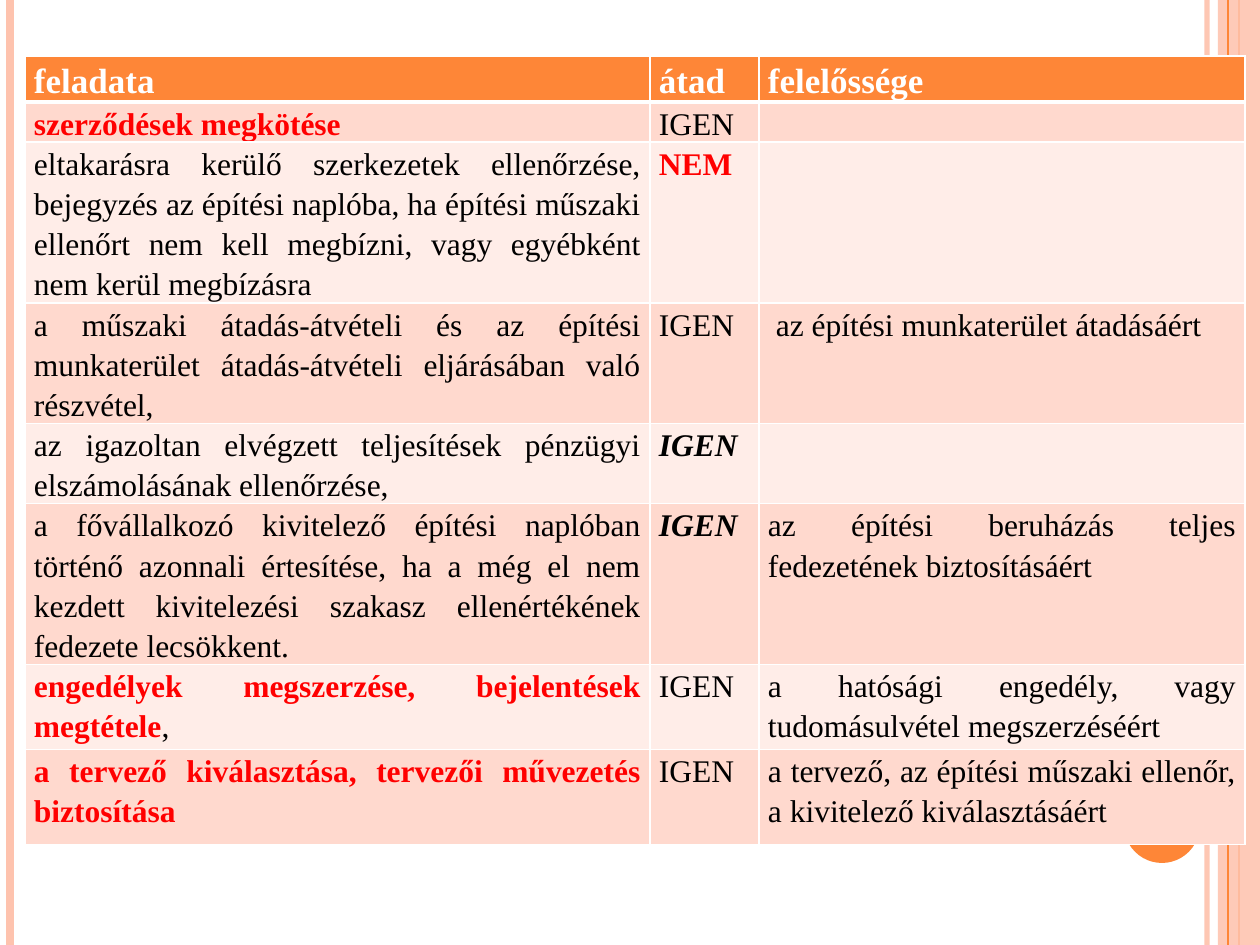
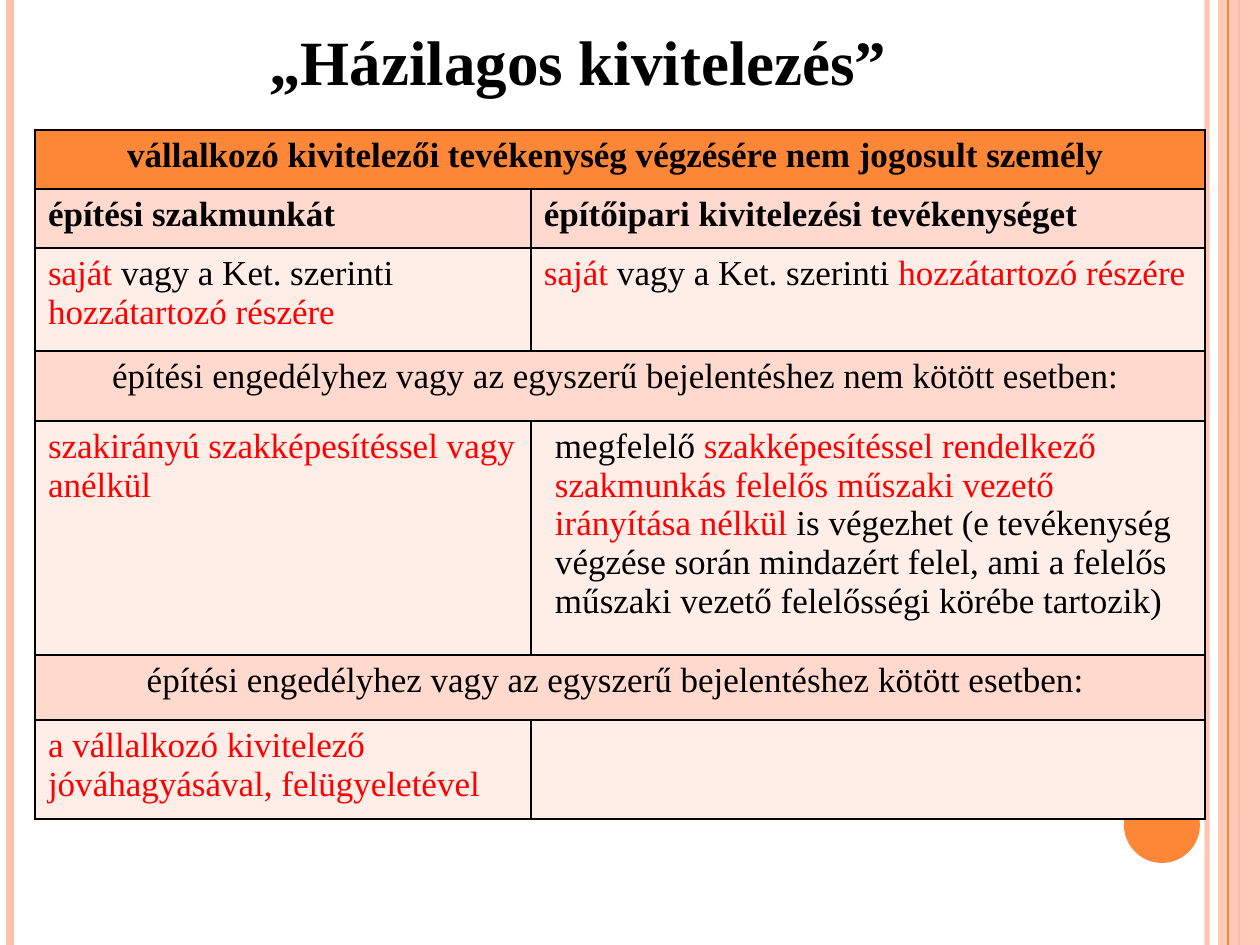
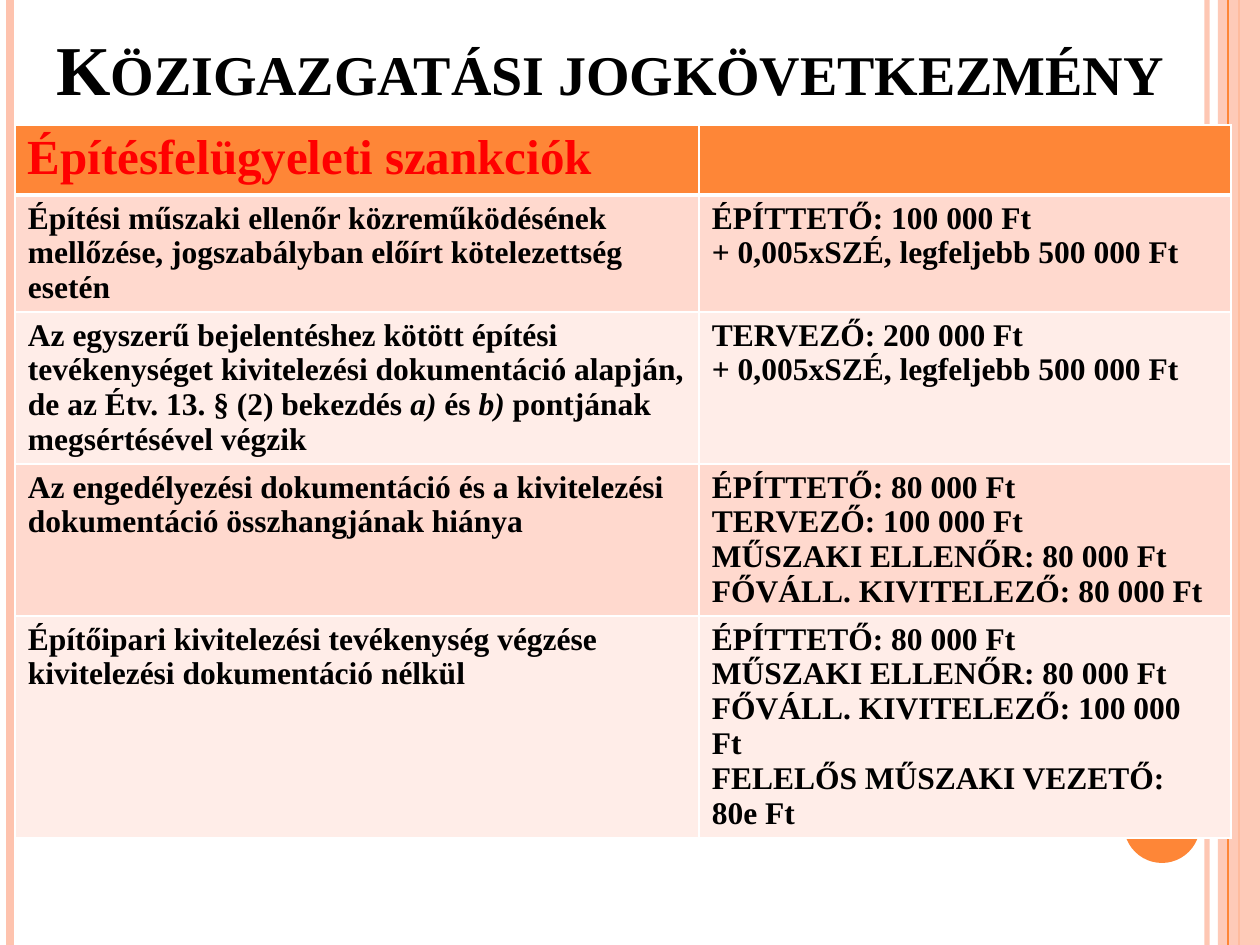
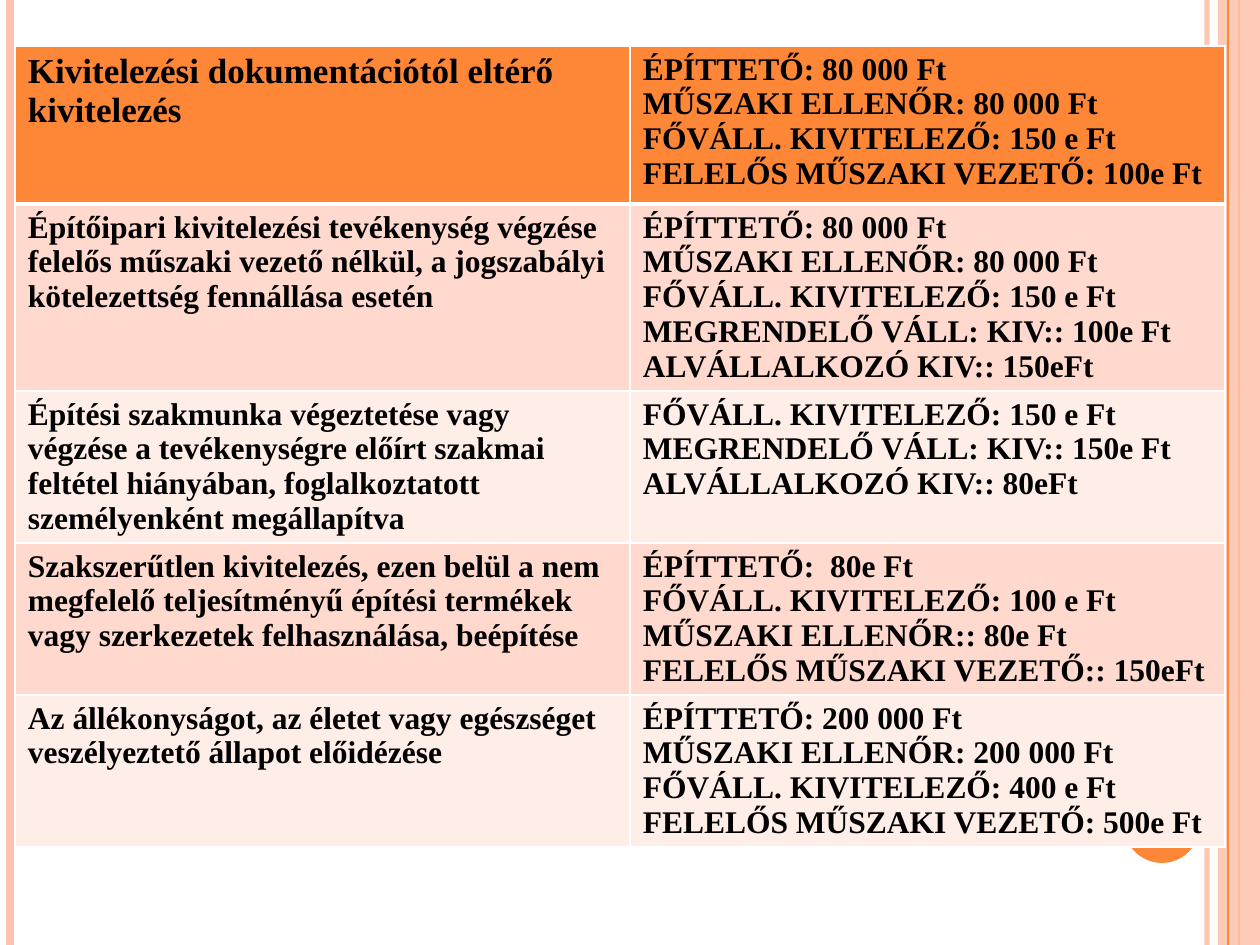
from lxml import etree
from pptx import Presentation
from pptx import util as u
from pptx.dml.color import RGBColor
from pptx.enum import shapes, text
from pptx.oxml import ns

PX = 914400 / 126
SLIDE_W, SLIDE_H = 1260, 945

THEME = {
    "font": "Times New Roman",
    "orange": "FE8637", "peach": "FEC3AE",
    "bands": ("FFEDE8", "FFD9CE"),
    "white": "FFFFFF", "black": "000000", "red": "FF0000",
    "body": 18, "lead": 20, "head": 28, "title": 36, "big_title": 40,
}
SIZES = ("body", "lead", "head", "title", "big_title")
COLOURS = ("white", "black", "red")

# Content: a cell is a string or a list of (text, style words) runs;
# "\n" parts paragraphs, "\v" breaks a line, None continues a merged cell
DUTIES = [
    [[("feladata ", "lead white bold")], [("átad", "lead white bold")],
     [("felelőssége", "lead white bold")]],
    [[("szerződések megkötése", "red bold")], "IGEN", ""],
    ["eltakarásra kerülő szerkezetek ellenőrzése, bejegyzés az építési naplóba, "
     "ha építési műszaki ellenőrt nem kell megbízni, vagy egyébként nem kerül megbízásra",
     [("NEM", "red bold")], ""],
    ["a műszaki átadás-átvételi és az építési munkaterület átadás-átvételi "
     "eljárásában való részvétel,",
     "IGEN", [(" ", "bold italic"), ("az építési munkaterület átadásáért", "")]],
    ["az igazoltan elvégzett teljesítések pénzügyi elszámolásának ellenőrzése,",
     [("IGEN", "bold italic")], ""],
    ["a fővállalkozó kivitelező építési naplóban történő azonnali értesítése, ha a még "
     "el nem kezdett kivitelezési szakasz ellenértékének fedezete lecsökkent.",
     [("IGEN", "bold italic")],
     "az építési beruházás teljes fedezetének biztosításáért"],
    [[("engedélyek megszerzése, bejelentések megtétele", "red bold"), (",", "")],
     "IGEN", "a hatósági engedély, vagy tudomásulvétel megszerzéséért"],
    [[("a tervező kiválasztása, tervezői művezetés biztosítása", "red bold")],
     "IGEN", "a tervező, az építési műszaki ellenőr, a kivitelező kiválasztásáért"],
]

SELF_BUILD = [
    [[("vállalkozó kivitelezői tevékenység végzésére nem jogosult személy ", "bold")], None],
    [[("építési szakmunkát", "bold")],
     [("építőipari kivitelezési tevékenységet", "bold")]],
    [[("saját ", "red"), ("vagy a Ket. szerinti ", ""), ("hozzátartozó részére", "red")],
     [("saját", "red"), (" vagy a Ket. szerinti ", ""), ("hozzátartozó részére", "red")]],
    ["építési engedélyhez vagy az egyszerű bejelentéshez nem kötött esetben: ", None],
    [[("szakirányú szakképesítéssel vagy anélkül", "red")],
     [("megfelelő ", ""),
      ("szakképesítéssel rendelkező szakmunkás felelős műszaki vezető irányítása nélkül", "red"),
      (" is végezhet (e tevékenység végzése során mindazért felel, ami a felelős műszaki "
       "vezető felelősségi körébe tartozik)", "")]],
    ["építési engedélyhez vagy az egyszerű bejelentéshez kötött esetben: ", None],
    [[("a vállalkozó kivitelező jóváhagyásával, felügyeletével", "red")], ""],
]

SANCTIONS = [
    [[("Építésfelügyeleti szankciók", "head red")], ""],
    ["Építési műszaki ellenőr közreműködésének mellőzése, jogszabályban előírt "
     "kötelezettség esetén",
     "ÉPÍTTETŐ: 100 000 Ft\v+ 0,005xSZÉ, legfeljebb 500 000 Ft"],
    [[("Az egyszerű bejelentéshez kötött építési tevékenységet kivitelezési dokumentáció "
       "alapján, de az Étv. 13. § (2) bekezdés ", ""), ("a) ", "italic"), ("és ", ""),
      ("b) ", "italic"), ("pontjának megsértésével végzik", "")],
     "TERVEZŐ: 200 000 Ft\v+ 0,005xSZÉ, legfeljebb 500 000 Ft"],
    ["Az engedélyezési dokumentáció és a kivitelezési dokumentáció összhangjának hiánya",
     "ÉPÍTTETŐ: 80 000 Ft\nTERVEZŐ: 100 000 Ft\nMŰSZAKI ELLENŐR: 80 000 Ft\n"
     "FŐVÁLL. KIVITELEZŐ: 80 000 Ft"],
    ["Építőipari kivitelezési tevékenység végzése kivitelezési dokumentáció nélkül",
     "ÉPÍTTETŐ: 80 000 Ft\nMŰSZAKI ELLENŐR: 80 000 Ft\n"
     "FŐVÁLL. KIVITELEZŐ: 100 000 Ft\nFELELŐS MŰSZAKI VEZETŐ: 80e Ft"],
]

MORE_SANCTIONS = [
    [[("Kivitelezési dokumentációtól eltérő kivitelezés", "lead")],
     "ÉPÍTTETŐ: 80 000 Ft\nMŰSZAKI ELLENŐR: 80 000 Ft\n"
     "FŐVÁLL. KIVITELEZŐ: 150 e Ft\nFELELŐS MŰSZAKI VEZETŐ: 100e Ft"],
    ["Építőipari kivitelezési tevékenység végzése felelős műszaki vezető nélkül, "
     "a jogszabályi kötelezettség fennállása esetén",
     "ÉPÍTTETŐ: 80 000 Ft\nMŰSZAKI ELLENŐR: 80 000 Ft\nFŐVÁLL. KIVITELEZŐ: 150 e Ft\n"
     "MEGRENDELŐ VÁLL: KIV:: 100e Ft\nALVÁLLALKOZÓ KIV:: 150eFt"],
    ["Építési szakmunka végeztetése vagy végzése a tevékenységre előírt szakmai feltétel "
     "hiányában, foglalkoztatott személyenként megállapítva",
     "FŐVÁLL. KIVITELEZŐ: 150 e Ft\nMEGRENDELŐ VÁLL: KIV:: 150e Ft\n"
     "ALVÁLLALKOZÓ KIV:: 80eFt"],
    ["Szakszerűtlen kivitelezés, ezen belül a nem megfelelő teljesítményű építési termékek "
     "vagy szerkezetek felhasználása, beépítése",
     "ÉPÍTTETŐ:  80e Ft\nFŐVÁLL. KIVITELEZŐ: 100 e Ft\nMŰSZAKI ELLENŐR:: 80e Ft\n"
     "FELELŐS MŰSZAKI VEZETŐ:: 150eFt"],
    ["Az állékonyságot, az életet vagy egészséget veszélyeztető állapot előidézése",
     "ÉPÍTTETŐ: 200 000 Ft\nMŰSZAKI ELLENŐR: 200 000 Ft\n"
     "FŐVÁLL. KIVITELEZŐ: 400 e Ft\nFELELŐS MŰSZAKI VEZETŐ: 500e Ft"],
]

JUSTIFIED = {"alignment": text.PP_ALIGN.JUSTIFY, "line_spacing": 1.15}
CENTRED = {"alignment": text.PP_ALIGN.CENTER}

SLIDES = [
    {"cells": DUTIES, "at": (25, 56), "cols": (625, 109, 486),
     "rows": (46, 39, 161, 120, 80, 161, 85, 95),
     "style": "body black", "para": JUSTIFIED, "insets": (9, 0)},
    {"cells": SELF_BUILD, "at": (35, 130), "cols": (496, 674),
     "rows": (59, 59, 103, 70, 234, 65, 99),
     "style": "lead black", "line": "black", "header_rule": 1, "indents": {(4, 1): 11},
     "title": ("„Házilagos kivitelezés”", "title black bold", (257, 16, 649, 90), {})},
    {"cells": SANCTIONS, "at": (15, 125), "cols": (684, 532),
     "rows": (70, 117, 152, 152, 222), "style": "body black bold",
     "title": ("Közigazgatási jogkövetkezmény", "big_title black bold smallcaps",
               (44, 16, 1147, 100), {"vertical_anchor": text.MSO_ANCHOR.BOTTOM})},
    {"cells": MORE_SANCTIONS, "at": (15, 46), "cols": (615, 595),
     "rows": (158, 187, 152, 152, 152), "style": "body black bold"},
]


def px(n):
    return u.Emu(round(n * PX))


def rgb(name):
    return RGBColor.from_string(THEME.get(name, name))


def set_all(target, values):
    for key, value in values.items():
        setattr(target, key, value)


def add_child(parent, tag, **attributes):
    return etree.SubElement(parent, ns.qn(tag), attributes)


def set_alpha(props, percent):
    colour = next(props.iter(ns.qn("a:srgbClr")))
    add_child(colour, "a:alpha", val=str(percent * 1000))


# Text
def style_run(run, style):
    words = style.split()
    values = {"name": THEME["font"], "bold": "bold" in words, "italic": "italic" in words}
    for word in words:
        if word in SIZES:
            values["size"] = u.Pt(THEME[word])
    set_all(run.font, values)
    # Later words override earlier ones
    run.font.color.rgb = rgb([w for w in words if w in COLOURS][-1])
    if "smallcaps" in words:
        run.font._element.set("cap", "small")


def write(frame, content, style, para=None, indent=0):
    runs = [(content, "")] if isinstance(content, str) else content
    paragraph = frame.paragraphs[0]
    for words, extra in runs:
        for i, part in enumerate(words.split("\n")):
            if i:
                paragraph = frame.add_paragraph()
            for j, piece in enumerate(part.split("\v")):
                if j:
                    paragraph.add_line_break()
                if piece:
                    run = paragraph.add_run()
                    run.text = piece
                    style_run(run, f"{style} {extra}")
    for paragraph in frame.paragraphs:
        set_all(paragraph, para or {})
        if indent:
            props = paragraph._p.get_or_add_pPr()
            props.set("marL", str(px(indent)))
            props.set("indent", "0")


def add_title(slide, words, style, box, values):
    frame = slide.shapes.add_textbox(*map(px, box)).text_frame
    set_all(frame, {"word_wrap": bool(values), **values})
    write(frame, words, style)


# Side bands shared by every slide
def add_rule(slide, x, colour, width, alpha=None):
    rule = slide.shapes.add_connector(
        shapes.MSO_CONNECTOR.STRAIGHT, px(x), 0, px(x), px(SLIDE_H))
    rule.line.color.rgb = rgb(colour)
    rule.line.width = u.Pt(width)
    props = rule._element.spPr
    if alpha:
        set_alpha(props, alpha)
    add_child(props, "a:effectLst")


def add_block(slide, kind, box, colour, alpha=None):
    block = slide.shapes.add_shape(kind, *map(px, box))
    block.shadow.inherit = False
    block.fill.solid()
    block.fill.fore_color.rgb = rgb(colour)
    block.line.fill.background()
    if alpha:
        set_alpha(block._element.spPr, alpha)


def add_bands(slide):
    add_rule(slide, 1207, "peach", 3, 93)
    add_rule(slide, 10, "peach", 4.5)
    add_rule(slide, 1239, "orange", 1.5)
    add_block(slide, shapes.MSO_SHAPE.RECTANGLE, (1218, 0, 42, SLIDE_H), "peach", 87)
    add_rule(slide, 1228, "orange", 0.75)
    add_block(slide, shapes.MSO_SHAPE.OVAL, (1124, 787, 76, 76), "orange")


# Tables
def set_borders(cell, colour, top, bottom):
    props = cell._tc.get_or_add_tcPr()
    for side, width in (("L", 1), ("R", 1), ("T", top), ("B", bottom)):
        edge = add_child(props, f"a:ln{side}", w=str(u.Pt(width)))
        add_child(add_child(edge, "a:solidFill"), "a:srgbClr", val=THEME[colour])


def add_grid(slide, part):
    cells, cols, rows = part["cells"], part["cols"], part["rows"]
    box = (*part["at"], sum(cols), sum(rows))
    grid = slide.shapes.add_table(len(rows), len(cols), *map(px, box)).table
    set_all(grid, {"first_row": False, "horz_banding": False})
    for column, width in zip(grid.columns, cols):
        column.width = px(width)
    for row, height in zip(grid.rows, rows):
        row.height = px(height)

    side, top = map(px, part.get("insets", (13, 6)))
    rule = part.get("header_rule", 3)
    for r, line in enumerate(cells):
        merged = None in line
        for c, content in enumerate(line):
            cell = grid.cell(r, c)
            set_all(cell, {"margin_left": side, "margin_right": side,
                           "margin_top": top, "margin_bottom": top})
            set_borders(cell, part.get("line", "white"),
                        rule if r == 1 else 1, rule if r == 0 else 1)
            cell.fill.solid()
            cell.fill.fore_color.rgb = rgb(THEME["bands"][r % 2] if r else "orange")
            if content is not None:
                write(cell.text_frame, content, part["style"],
                      CENTRED if merged else part.get("para"),
                      part.get("indents", {}).get((r, c), 0))
        if merged:
            grid.cell(r, 0).merge(grid.cell(r, len(cols) - 1))


def main():
    deck = Presentation()
    set_all(deck, {"slide_width": px(SLIDE_W), "slide_height": px(SLIDE_H)})
    for part in SLIDES:
        slide = deck.slides.add_slide(deck.slide_layouts[6])
        add_bands(slide)
        add_grid(slide, part)
        if "title" in part:
            add_title(slide, *part["title"])
    deck.save("out.pptx")


if __name__ == "__main__":
    main()
